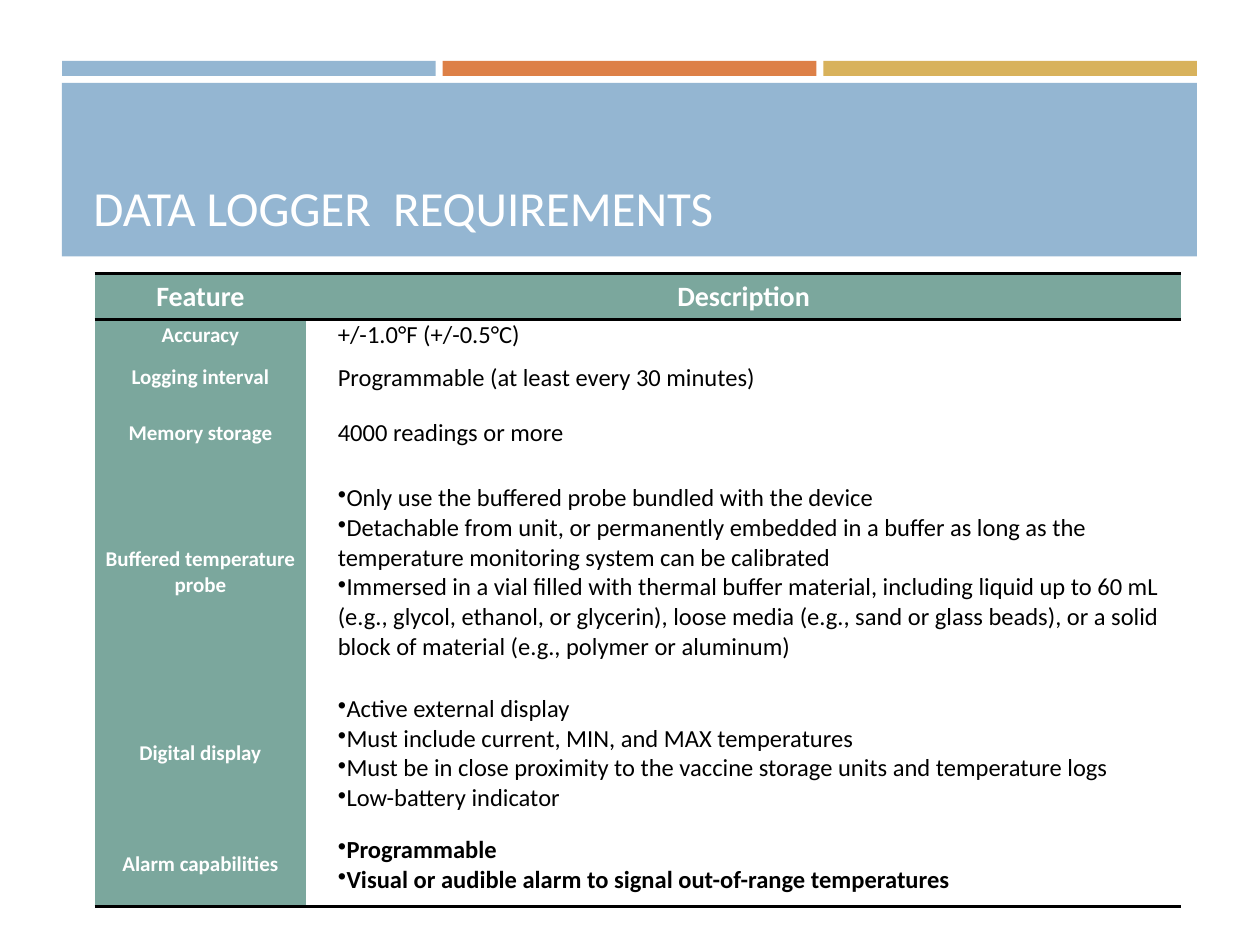
import pptx
import pptx.dml.color
import pptx.enum.shapes
import pptx.enum.text
import pptx.oxml
import pptx.oxml.ns
import pptx.util
from pptx.util import Cm

COLORS = {"blue": "94B6D2", "orange": "DD8047", "gold": "D8B25C",
          "green": "7BA79D", "white": "FFFFFF", "black": "000000"}
FONT = "Calibri"
NO_STYLE = "{2D5ABB26-0587-4C30-8999-92F81FD0307C}"

# Content: feature, description lines, row height in cm
TITLE = "DATA LOGGER  REQUIREMENTS"
ROWS = [
    ("Feature", ["Description"], 0.94),
    ("Accuracy", ["+/-1.0°F (+/-0.5°C)"], 0.57),
    ("Logging interval", ["Programmable (at least every 30 minutes)"], 1.12),
    ("Memory storage", ["4000 readings or more"], 1.12),
    ("Buffered temperature probe", [
        "Only use the buffered probe bundled with the device",
        "Detachable from unit, or permanently embedded in a buffer as long as "
        "the temperature monitoring system can be calibrated",
        "Immersed in a vial filled with thermal buffer material, including "
        "liquid up to 60 mL (e.g., glycol, ethanol, or glycerin), loose media "
        "(e.g., sand or glass beads), or a solid block of material "
        "(e.g., polymer or aluminum)"], 4.5),
    ("Digital display", [
        "Active external display",
        "Must include current, MIN, and MAX temperatures",
        "Must be in close proximity to the vaccine storage units and "
        "temperature logs",
        "Low-battery indicator"], 2.8),
    ("Alarm capabilities", [
        "Programmable",
        "Visual or audible alarm to signal out-of-range temperatures"], 1.68),
]
COLUMN_WIDTHS = [4.26, 17.64]
LAST = len(ROWS) - 1

# Text formats
HEADER = {"size": 16, "bold": True, "color": "white"}
FEATURE = {"size": 12, "bold": True, "color": "white"}
DETAIL = {"size": 14, "bold": False, "color": "black"}
ALARM = {**DETAIL, "bold": True}


def rgb(name):
    return pptx.dml.color.RGBColor.from_string(COLORS[name])


def add_bar(page, left, top, width, height, color):
    bar = page.shapes.add_shape(pptx.enum.shapes.MSO_SHAPE.RECTANGLE,
                                Cm(left), Cm(top), Cm(width), Cm(height))
    bar.shadow.inherit = False
    bar.fill.solid()
    bar.fill.fore_color.rgb = rgb(color)
    bar.line.fill.background()


def write(para, text, style):
    span = para.add_run()
    span.text = text
    values = {"name": FONT, "size": pptx.util.Pt(style["size"]),
              "bold": style["bold"]}
    for key, value in values.items():
        setattr(span.font, key, value)
    span.font.color.rgb = rgb(style["color"])


def add_border(cell, side):
    cell.fill._xPr.append(pptx.oxml.parse_xml(
        f'<a:{side} {pptx.oxml.ns.nsdecls("a")} w="25400"><a:solidFill>'
        f'<a:srgbClr val="{COLORS["black"]}"/></a:solidFill></a:{side}>'))


def indent(para, bulleted):
    properties = para._p.get_or_add_pPr()
    properties.set("marL", str(Cm(0.64)))
    properties.set("indent", "0")
    if bulleted:
        properties.append(pptx.oxml.parse_xml(
            f'<a:buChar {pptx.oxml.ns.nsdecls("a")} char="•"/>'))


def fill_cell(cell, lines, style, fill, centered, sides):
    values = {"margin_left": 0, "margin_right": 0, "margin_top": 0,
              "margin_bottom": 0,
              "vertical_anchor": pptx.enum.text.MSO_ANCHOR.MIDDLE}
    for key, value in values.items():
        setattr(cell, key, value)
    for side in sides:
        add_border(cell, side)
    cell.fill.solid()
    cell.fill.fore_color.rgb = rgb(fill)
    frame = cell.text_frame
    for number, line in enumerate(lines):
        para = frame.add_paragraph() if number else frame.paragraphs[0]
        if centered:
            para.alignment = pptx.enum.text.PP_ALIGN.CENTER
        else:
            indent(para, len(lines) > 1)
        write(para, line, style)


def add_table(page):
    height = sum(row[2] for row in ROWS)
    table = page.shapes.add_table(len(ROWS), 2, Cm(1.91), Cm(5.51),
                                  Cm(sum(COLUMN_WIDTHS)), Cm(height)).table
    table.horz_banding = False
    table._tbl.tblPr.find(pptx.oxml.ns.qn("a:tableStyleId")).text = NO_STYLE
    for column, width in zip(table.columns, COLUMN_WIDTHS):
        column.width = Cm(width)
    for number, (feature, lines, row_height) in enumerate(ROWS):
        table.rows[number].height = Cm(row_height)
        header = number == 0
        sides = ["lnT", "lnB"] if header else ["lnB"] if number == LAST else []
        detail = HEADER if header else ALARM if number == LAST else DETAIL
        fill_cell(table.cell(number, 0), [feature],
                  HEADER if header else FEATURE, "green", True, sides)
        fill_cell(table.cell(number, 1), lines, detail,
                  "green" if header else "white", header, sides)


def add_title(page):
    title = page.shapes.title
    # Bring the title in front of the banner
    page.shapes._spTree.append(title._element)
    box = {"left": 1.63, "top": 1.9, "width": 22.2, "height": 3}
    for key, value in box.items():
        setattr(title, key, Cm(value))
    frame = title.text_frame
    frame.word_wrap = True
    frame.vertical_anchor = pptx.enum.text.MSO_ANCHOR.BOTTOM
    para = frame.paragraphs[0]
    para.alignment = pptx.enum.text.PP_ALIGN.LEFT
    write(para, TITLE, {"size": 28, "bold": False, "color": "white"})


def main():
    deck = pptx.Presentation()
    deck.slide_width, deck.slide_height = Cm(25.4), Cm(19.05)
    page = deck.slides.add_slide(deck.slide_layouts[5])

    # Three accent bars above the banner
    left, width, gap = 1.25, 22.88, 0.14
    bar_width = (width - 2 * gap) / 3
    for number, color in enumerate(["blue", "orange", "gold"]):
        add_bar(page, left + number * (bar_width + gap), 1.23,
                bar_width, 0.3, color)
    add_bar(page, left, 1.67, width, 3.5, "blue")

    add_title(page)
    add_table(page)
    deck.save("out.pptx")


if __name__ == "__main__":
    main()
